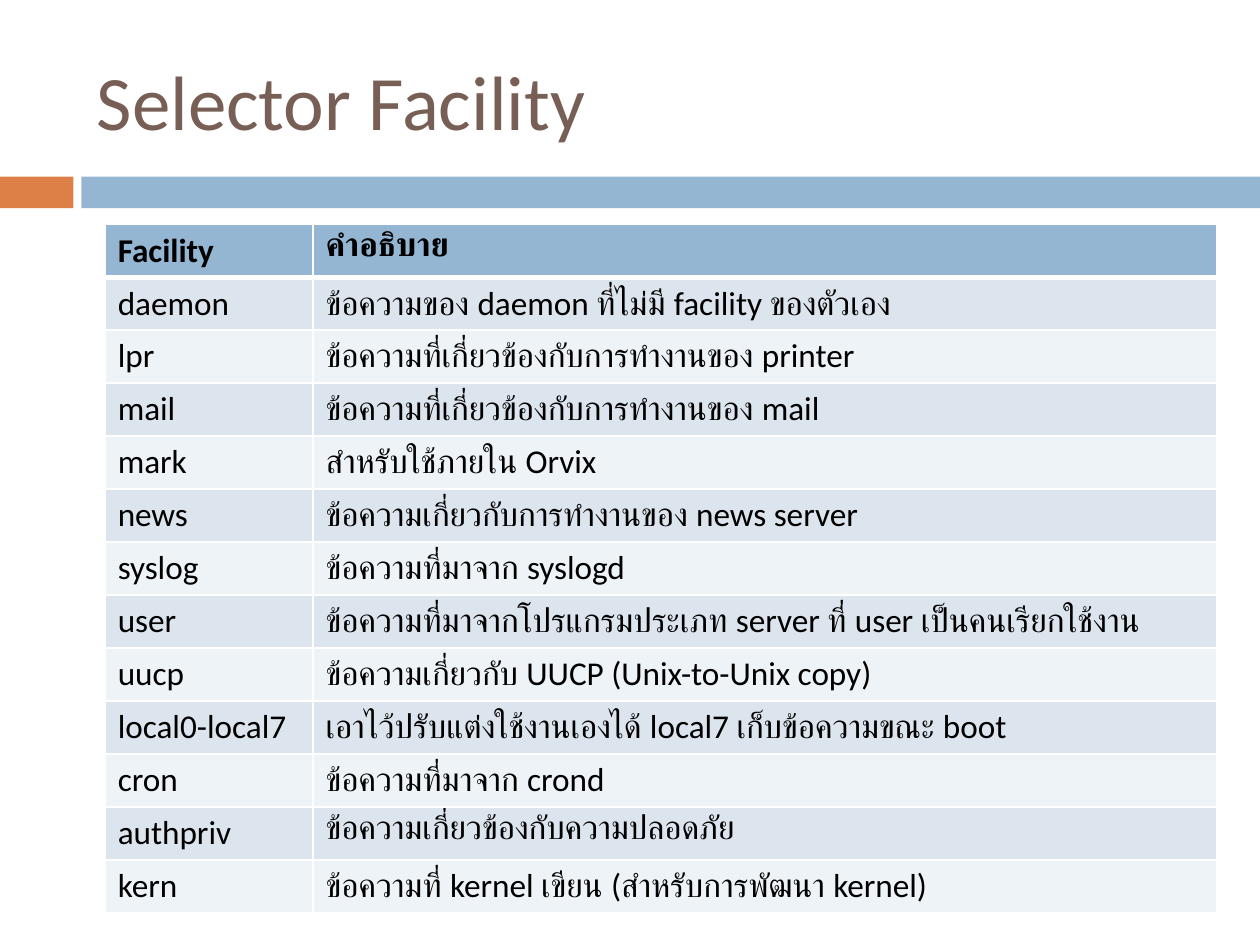
from dataclasses import dataclass

from pptx import Presentation
from pptx.dml.color import RGBColor
from pptx.enum.shapes import MSO_SHAPE as Preset
from pptx.enum.text import MSO_ANCHOR as Anchor, PP_ALIGN as Align
from pptx.oxml import parse_xml
from pptx.oxml.ns import nsdecls
from pptx.util import Cm, Pt

FONT = "Calibri"
BLUE = "94B6D2"
ORANGE = "DD8047"
BROWN = "775F55"
BLACK = "000000"
WHITE = "FFFFFF"
BANDS = ("DCE5EE", "EEF3F7")
COLUMN_WIDTHS = (4.19, 18.21)
ROW_HEIGHT = 1.06


@dataclass
class Bar:
    left: float
    width: float
    color: str


@dataclass
class Entry:
    facility: str
    description: str


BARS = [Bar(0, 1.48, ORANGE), Bar(1.64, 23.76, BLUE)]

ENTRIES = [
    Entry("Facility", "คำอธิบาย"),
    Entry("daemon", "ข้อความของ daemon ที่ไม่มี facility ของตัวเอง"),
    Entry("lpr", "ข้อความที่เกี่ยวข้องกับการทำงานของ printer"),
    Entry("mail", "ข้อความที่เกี่ยวข้องกับการทำงานของ mail"),
    Entry("mark", "สำหรับใช้ภายใน Orvix"),
    Entry("news", "ข้อความเกี่ยวกับการทำงานของ news server"),
    Entry("syslog", "ข้อความที่มาจาก syslogd"),
    Entry("user", "ข้อความที่มาจากโปรแกรมประเภท server ที่ user เป็นคนเรียกใช้งาน"),
    Entry("uucp", "ข้อความเกี่ยวกับ UUCP (Unix-to-Unix copy)"),
    Entry("local0-local7", "เอาไว้ปรับแต่งใช้งานเองได้ local7 เก็บข้อความขณะ boot"),
    Entry("cron", "ข้อความที่มาจาก crond"),
    Entry("authpriv", "ข้อความเกี่ยวข้องกับความปลอดภัย"),
    Entry("kern", "ข้อความที่ kernel เขียน (สำหรับการพัฒนา kernel)"),
]


def paint(target, color: str) -> None:
    target.solid()
    target.fore_color.rgb = RGBColor.from_string(color)


def add_span(para, text: str, size: float, color: str, bold: bool = False) -> None:
    span = para.add_run()
    span.text = text
    span.font.name = FONT
    span.font.size = Pt(size)
    span.font.bold = bold
    paint(span.font.fill, color)


def add_bar(page, bar: Bar) -> None:
    box = page.shapes.add_shape(
        Preset.RECTANGLE, Cm(bar.left), Cm(3.56), Cm(bar.width), Cm(0.64)
    )
    box.shadow.inherit = False
    paint(box.fill, bar.color)
    box.line.fill.background()


def add_title(page, text: str) -> None:
    title = page.shapes.title
    title.left, title.top = Cm(1.7), Cm(0.64)
    title.width, title.height = Cm(22.66), Cm(2.74)
    title.text_frame.vertical_anchor = Anchor.MIDDLE
    para = title.text_frame.paragraphs[0]
    para.alignment = Align.LEFT
    add_span(para, text, 44, BROWN)


def set_borders(cell, bottom: float) -> None:
    properties = cell._tc.get_or_add_tcPr()
    widths = {"lnL": 1, "lnR": 1, "lnT": 1, "lnB": bottom}
    for position, (tag, width) in enumerate(widths.items()):
        border = parse_xml(
            f'<a:{tag} {nsdecls("a")} w="{Pt(width)}"><a:solidFill>'
            f'<a:srgbClr val="{WHITE}"/></a:solidFill></a:{tag}>'
        )
        properties.insert(position, border)


def add_facility_table(page, entries: list[Entry]) -> None:
    table = page.shapes.add_table(
        len(entries), len(COLUMN_WIDTHS), Cm(2.12), Cm(4.52),
        Cm(sum(COLUMN_WIDTHS)), Cm(ROW_HEIGHT * len(entries)),
    ).table
    for column, width in zip(table.columns, COLUMN_WIDTHS):
        column.width = Cm(width)
    for index, entry in enumerate(entries):
        header = index == 0
        table.rows[index].height = Cm(ROW_HEIGHT)
        for column, text in enumerate((entry.facility, entry.description)):
            cell = table.cell(index, column)
            paint(cell.fill, BLUE if header else BANDS[(index - 1) % 2])
            top_edge = 3 if index == 1 else 1
            set_borders(cell, 3 if header else 1)
            if top_edge == 3:
                cell._tc.tcPr[2].set("w", str(Pt(top_edge)))
            add_span(cell.text_frame.paragraphs[0], text, 19, BLACK, header)


def main() -> None:
    deck = Presentation()
    deck.slide_width, deck.slide_height = Cm(25.4), Cm(19.05)
    page = deck.slides.add_slide(deck.slide_layouts[5])
    for bar in BARS:
        add_bar(page, bar)
    add_title(page, "Selector Facility")
    add_facility_table(page, ENTRIES)
    deck.save("out.pptx")


if __name__ == "__main__":
    main()
